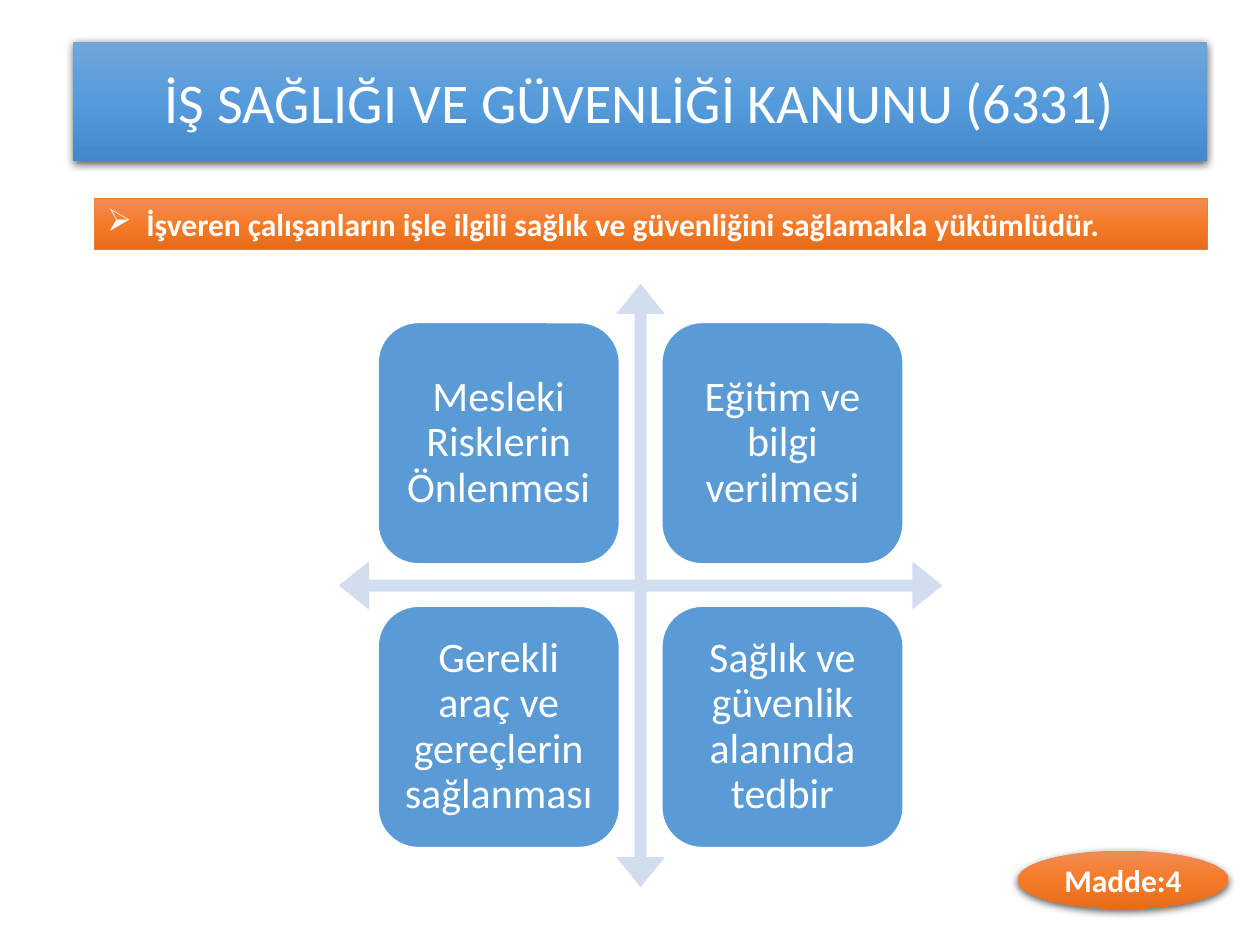
from lxml import etree
from pptx import Presentation
from pptx.dml.color import RGBColor
from pptx.enum.shapes import MSO_SHAPE
from pptx.enum.text import MSO_ANCHOR, MSO_AUTO_SIZE, PP_ALIGN
from pptx.oxml.ns import qn
from pptx.util import Cm, Pt

RECTANGLE = MSO_SHAPE.RECTANGLE
ROUNDED = MSO_SHAPE.ROUNDED_RECTANGLE
OVAL = MSO_SHAPE.OVAL
QUAD_ARROW = MSO_SHAPE.QUAD_ARROW
LEFT, CENTER = PP_ALIGN.LEFT, PP_ALIGN.CENTER
TOP, MIDDLE = MSO_ANCHOR.TOP, MSO_ANCHOR.MIDDLE
GROW = MSO_AUTO_SIZE.SHAPE_TO_FIT_TEXT

WHITE, BLUE, PALE_BLUE, ORANGE = "FFFFFF", "5B9BD5", "D2DEEF", "ED7D31"
BLUE_GRADIENT = ("71A6DB", "559BDB", "448ACA")
ORANGE_GRADIENT = ("F18C57", "F67B28", "E56C19")

DUTIES = (
    ("Mesleki Risklerin Önlenmesi", "Eğitim ve bilgi verilmesi"),
    ("Gerekli araç ve gereçlerin sağlanması",
     "Sağlık ve güvenlik alanında tedbir"),
)


def color(hex_text):
    return RGBColor.from_string(hex_text)


def add_element(parent, tag, **attributes):
    return etree.SubElement(parent, qn(tag), attributes)


def fill_gradient(shape, colors):
    """Fill from top to bottom with evenly spaced colours."""
    shape.fill.gradient()
    shape.fill.gradient_angle = 270
    stops = next(shape.element.spPr.iter(qn("a:gsLst")))
    for stop in list(stops):
        stops.remove(stop)
    for index, hex_text in enumerate(colors):
        position = 100000 * index // (len(colors) - 1)
        stop = add_element(stops, "a:gs", pos=str(position))
        add_element(stop, "a:srgbClr", val=hex_text)


def add_shadow(shape):
    effects = shape.element.spPr.find(qn("a:effectLst"))
    shadow = add_element(effects, "a:outerShdw", blurRad=str(Pt(4.5)),
                         dist=str(Pt(1.5)), dir="5400000",
                         algn="ctr", rotWithShape="0")
    black = add_element(shadow, "a:srgbClr", val="000000")
    add_element(black, "a:alpha", val="63000")


def add_bullet(para, symbol, indent):
    properties = para._p.get_or_add_pPr()
    properties.set("marL", str(indent))
    properties.set("indent", str(-indent))
    bullet_color = add_element(properties, "a:buClr")
    add_element(bullet_color, "a:srgbClr", val=WHITE)
    add_element(properties, "a:buChar", char=symbol)


class SlideBuilder:
    def __init__(self, page, font="Calibri"):
        self.page = page
        self.font = font

    def shape(self, kind, left, top, width, height, fill,
              line=None, line_width=1, shadow=False):
        """Add a shape in centimetres; fill is one colour or a gradient."""
        shape = self.page.shapes.add_shape(
            kind, Cm(left), Cm(top), Cm(width), Cm(height))
        shape.shadow.inherit = False
        if isinstance(fill, str):
            shape.fill.solid()
            shape.fill.fore_color.rgb = color(fill)
        else:
            fill_gradient(shape, fill)
        if line:
            shape.line.color.rgb = color(line)
            shape.line.width = Pt(line_width)
        else:
            shape.line.fill.background()
        if shadow:
            add_shadow(shape)
        return shape

    def text(self, shape, text, size=18, bold=False, align=CENTER,
             anchor=MIDDLE, spacing=None, after=None, margin=None):
        frame = shape.text_frame
        frame.word_wrap = True
        frame.vertical_anchor = anchor
        if margin is not None:
            frame.margin_left = frame.margin_right = Cm(margin)
            frame.margin_top = frame.margin_bottom = Cm(margin)
        para = frame.paragraphs[0]
        para.alignment = align
        if spacing:
            para.line_spacing = spacing
        if after:
            para.space_after = Pt(after)
        span = para.add_run()
        span.text = text
        span.font.name = self.font
        span.font.size = Pt(size)
        span.font.bold = bold
        span.font.color.rgb = color(WHITE)
        return para


def main():
    deck = Presentation()
    deck.slide_width, deck.slide_height = Cm(25.4), Cm(19.05)
    builder = SlideBuilder(deck.slides.add_slide(deck.slide_layouts[6]))

    title = builder.shape(RECTANGLE, 1.47, 0.84, 22.86, 2.41,
                          BLUE_GRADIENT, shadow=True)
    builder.text(title, "İŞ SAĞLIĞI VE GÜVENLİĞİ KANUNU (6331)", size=32)

    banner = builder.shape(RECTANGLE, 1.91, 4.01, 22.43, 1.02,
                           ORANGE_GRADIENT, line=ORANGE, line_width=0.5)
    duty = builder.text(
        banner, "İşveren çalışanların işle ilgili sağlık ve güvenliğini "
        "sağlamakla yükümlüdür.", bold=True, align=LEFT, anchor=TOP)
    add_bullet(duty, "➢", Cm(0.79))
    banner.text_frame.auto_size = GROW

    arrows = builder.shape(QUAD_ARROW, 6.83, 5.72, 12.17, 12.17, PALE_BLUE)
    for index, value in enumerate((0.02, 0.04, 0.05)):
        arrows.adjustments[index] = value

    side, step = 4.87, 5.72
    for row, texts in enumerate(DUTIES):
        for column, text in enumerate(texts):
            tile = builder.shape(ROUNDED, 7.62 + column * step,
                                 6.5 + row * step, side, side,
                                 BLUE, line=WHITE)
            builder.text(tile, text, size=24, spacing=0.9, after=8.4,
                         margin=0.25)

    article = builder.shape(OVAL, 20.52, 17.15, 4.24, 1.17,
                            ORANGE_GRADIENT, shadow=True)
    builder.text(article, "Madde:4", bold=True)

    deck.save("out.pptx")


if __name__ == "__main__":
    main()
